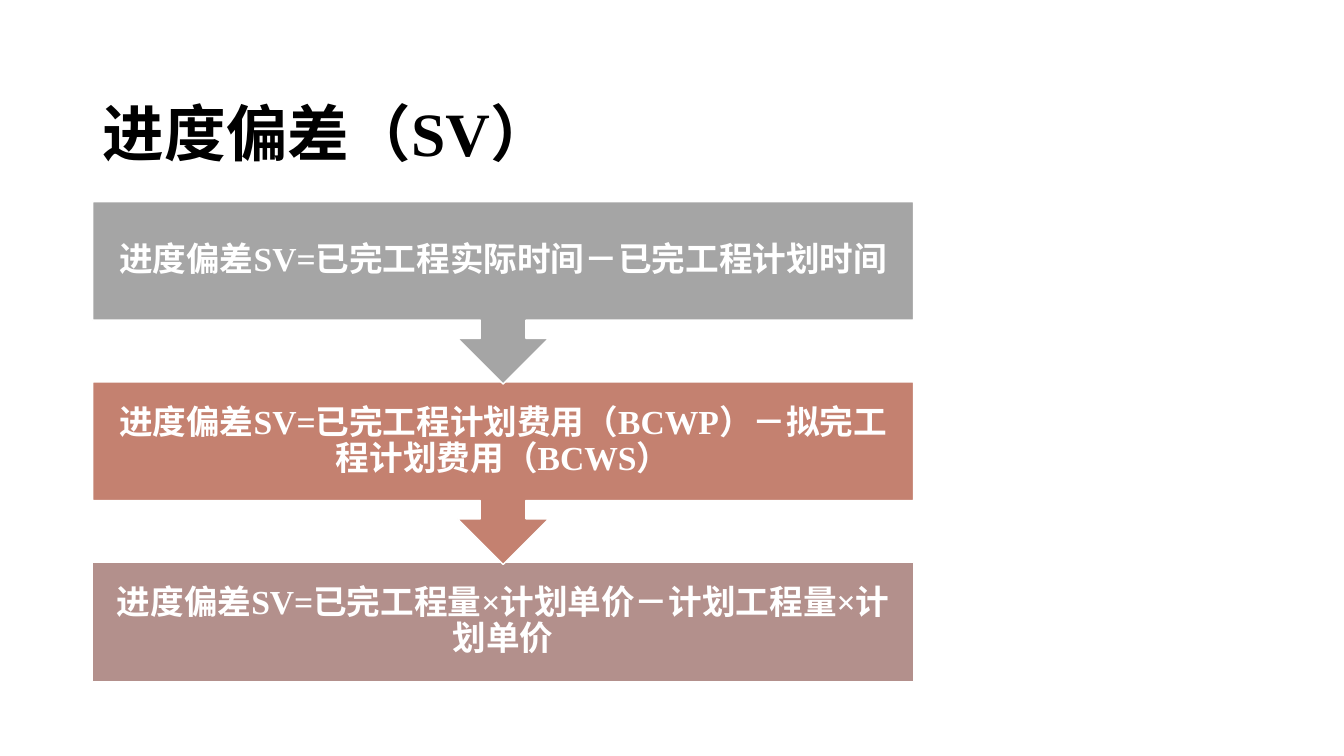
from dataclasses import dataclass

from pptx import Presentation
from pptx import util as u
from pptx.dml.color import RGBColor
from pptx.enum import shapes, text

PX = 9144
FACE = "Times New Roman"
WHITE = "FFFFFF"
LEFT, TOP, WIDE, STEP = 92, 200, 814, 179
KIND = shapes.MSO_SHAPE


@dataclass
class Step:
    words: str
    fill: str
    kind: int
    high: int


STEPS = [
    Step("进度偏差SV=已完工程实际时间－已完工程计划时间",
         "A5A5A5", KIND.DOWN_ARROW_CALLOUT, 181),
    Step("进度偏差SV=已完工程计划费用（BCWP）－拟完工程计划费用（BCWS）",
         "C48170", KIND.DOWN_ARROW_CALLOUT, 181),
    Step("进度偏差SV=已完工程量×计划单价－计划工程量×计划单价",
         "B3908C", KIND.RECTANGLE, 118),
]


def px(count: int) -> u.Emu:
    return u.Emu(count * PX)


def paint(color, code: str) -> None:
    color.rgb = RGBColor.from_string(code)


def assign(item, values: dict) -> None:
    for name, value in values.items():
        setattr(item, name, value)


def place(shape, left: int, top: int, wide: int, high: int) -> None:
    assign(shape, {"left": px(left), "top": px(top),
                   "width": px(wide), "height": px(high)})


def write(shape, words: str, size: int, code: str, frame: dict, para: dict) -> None:
    body = shape.text_frame
    body.text = words
    assign(body, {"word_wrap": True, "auto_size": text.MSO_AUTO_SIZE.NONE,
                  "vertical_anchor": text.MSO_ANCHOR.MIDDLE, **frame})
    line = body.paragraphs[0]
    assign(line, para)
    font = line.runs[0].font
    assign(font, {"name": FACE, "size": u.Pt(size), "bold": True})
    paint(font.color, code)


def draw(slide, step: Step, top: int) -> None:
    box = slide.shapes.add_shape(step.kind, px(LEFT), px(top), px(WIDE), px(step.high))
    box.shadow.inherit = False
    box.fill.solid()
    paint(box.fill.fore_color, step.fill)
    paint(box.line.color, WHITE)
    box.line.width = u.Pt(1)
    sides = ("left", "top", "right", "bottom")
    write(box, step.words, 24, WHITE,
          {f"margin_{side}": px(19) for side in sides},
          {"alignment": text.PP_ALIGN.CENTER, "line_spacing": 0.9})


def main() -> None:
    deck = Presentation()
    assign(deck, {"slide_width": px(1333), "slide_height": px(750)})
    slide = deck.slides.add_slide(deck.slide_layouts[5])
    title = slide.shapes.title
    place(title, LEFT, 40, 1150, 145)
    write(title, "进度偏差（SV）", 44, "000000", {},
          {"alignment": text.PP_ALIGN.LEFT, "line_spacing": 1.5})
    for row, step in reversed(list(enumerate(STEPS))):
        draw(slide, step, TOP + row * STEP)
    deck.save("out.pptx")


if __name__ == "__main__":
    main()
